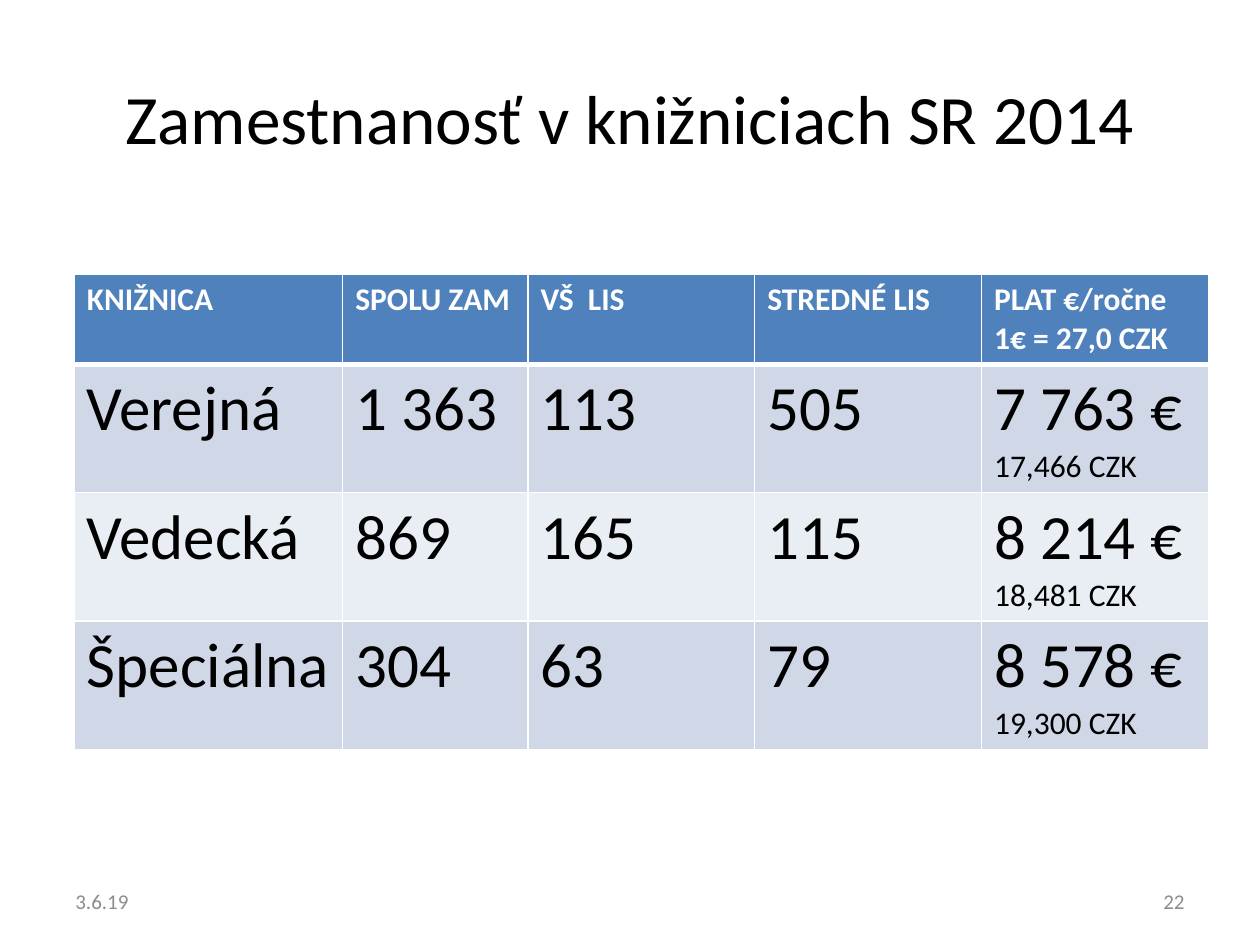
import dataclasses

import lxml.etree
import pptx
import pptx.dml.color
import pptx.enum.text
import pptx.oxml.ns
import pptx.util

Inches = pptx.util.Inches
ALIGN = pptx.enum.text.PP_ALIGN
MIDDLE = pptx.enum.text.MSO_ANCHOR.MIDDLE

HEAD = ["KNIŽNICA", "SPOLU ZAM", "VŠ  LIS", "STREDNÉ LIS", "PLAT €/ročne\n1€ = 27,0 CZK"]
ROWS = [
    ["Verejná", "1 363", "113", "505", "7 763 €\n17,466 CZK"],
    ["Vedecká", "869", "165", "115", "8 214 €\n18,481 CZK"],
    ["Špeciálna", "304", "63", "79", "8 578 €\n19,300 CZK"],
]
WIDTHS = [2.13, 1.47, 1.8, 1.8, 1.8]


@dataclasses.dataclass(frozen=True)
class Theme:
    font: str = "Calibri"
    ink: str = "000000"
    white: str = "FFFFFF"
    gray: str = "8C8C8C"
    blue: str = "4F81BD"
    bands: tuple = ("D0D8E8", "E9EDF4")
    title: float = 39.6
    big: float = 36
    small: float = 18
    foot: float = 12


class Deck:
    """Hold the theme and the current slide, and draw each kind of element."""

    def __init__(self, theme, slide):
        self.theme = theme
        self.slide = slide

    def style(self, para, size, color, bold=False, align=ALIGN.LEFT):
        para.alignment = align
        for run in para.runs:
            font = run.font
            font.name = self.theme.font
            font.size = pptx.util.Pt(size)
            font.bold = bold
            font.color.rgb = pptx.dml.color.RGBColor.from_string(color)

    def title(self, text, left, top, width, height):
        shape = self.slide.shapes.title
        shape.left, shape.top = Inches(left), Inches(top)
        shape.width, shape.height = Inches(width), Inches(height)
        frame = shape.text_frame
        frame.text = text
        frame.vertical_anchor = MIDDLE
        self.style(frame.paragraphs[0], self.theme.title, self.theme.ink, align=ALIGN.CENTER)

    def label(self, text, left, top, width, height, align):
        box = self.slide.shapes.add_textbox(
            Inches(left), Inches(top), Inches(width), Inches(height))
        frame = box.text_frame
        frame.word_wrap = True
        frame.vertical_anchor = MIDDLE
        frame.text = text
        self.style(frame.paragraphs[0], self.theme.foot, self.theme.gray, align=align)

    def edge(self, cell, side, width):
        props = cell._tc.get_or_add_tcPr()
        name = pptx.oxml.ns.qn
        line = lxml.etree.SubElement(props, name("a:ln" + side), w=str(pptx.util.Pt(width)))
        fill = lxml.etree.SubElement(line, name("a:solidFill"))
        lxml.etree.SubElement(fill, name("a:srgbClr"), val=self.theme.white)

    def cell(self, cell, text, fill, head):
        theme = self.theme
        for side in "LRTB":
            self.edge(cell, side, 3 if head and side == "B" else 1)
        cell.fill.solid()
        cell.fill.fore_color.rgb = pptx.dml.color.RGBColor.from_string(fill)
        cell.margin_right = Inches(0.05)
        cell.text_frame.text = text
        for i, para in enumerate(cell.text_frame.paragraphs):
            size = theme.small if head or i else theme.big
            self.style(para, size, theme.white if head else theme.ink, bold=head)

    def table(self, rows, widths, heights, left, top):
        frame = self.slide.shapes.add_table(
            len(rows), len(widths), Inches(left), Inches(top),
            Inches(sum(widths)), Inches(sum(heights)))
        grid = frame.table
        for col, width in zip(grid.columns, widths):
            col.width = Inches(width)
        for r, (texts, height) in enumerate(zip(rows, heights)):
            grid.rows[r].height = Inches(height)
            fill = self.theme.bands[(r - 1) % 2] if r else self.theme.blue
            for c, text in enumerate(texts):
                self.cell(grid.cell(r, c), text, fill, r == 0)


def main():
    show = pptx.Presentation()
    show.slide_width, show.slide_height = Inches(10), Inches(7.5)
    deck = Deck(Theme(), show.slides.add_slide(show.slide_layouts[5]))
    deck.title("Zamestnanosť v knižniciach SR 2014", 0.5, 0.3, 9, 1.25)
    deck.table([HEAD] + ROWS, WIDTHS, [0.69] + [1.02] * len(ROWS), 0.59, 2.18)
    deck.label("3.6.19", 0.5, 6.95, 2.33, 0.4, ALIGN.LEFT)
    deck.label("22", 7.17, 6.95, 2.33, 0.4, ALIGN.RIGHT)
    show.save("out.pptx")


if __name__ == "__main__":
    main()
